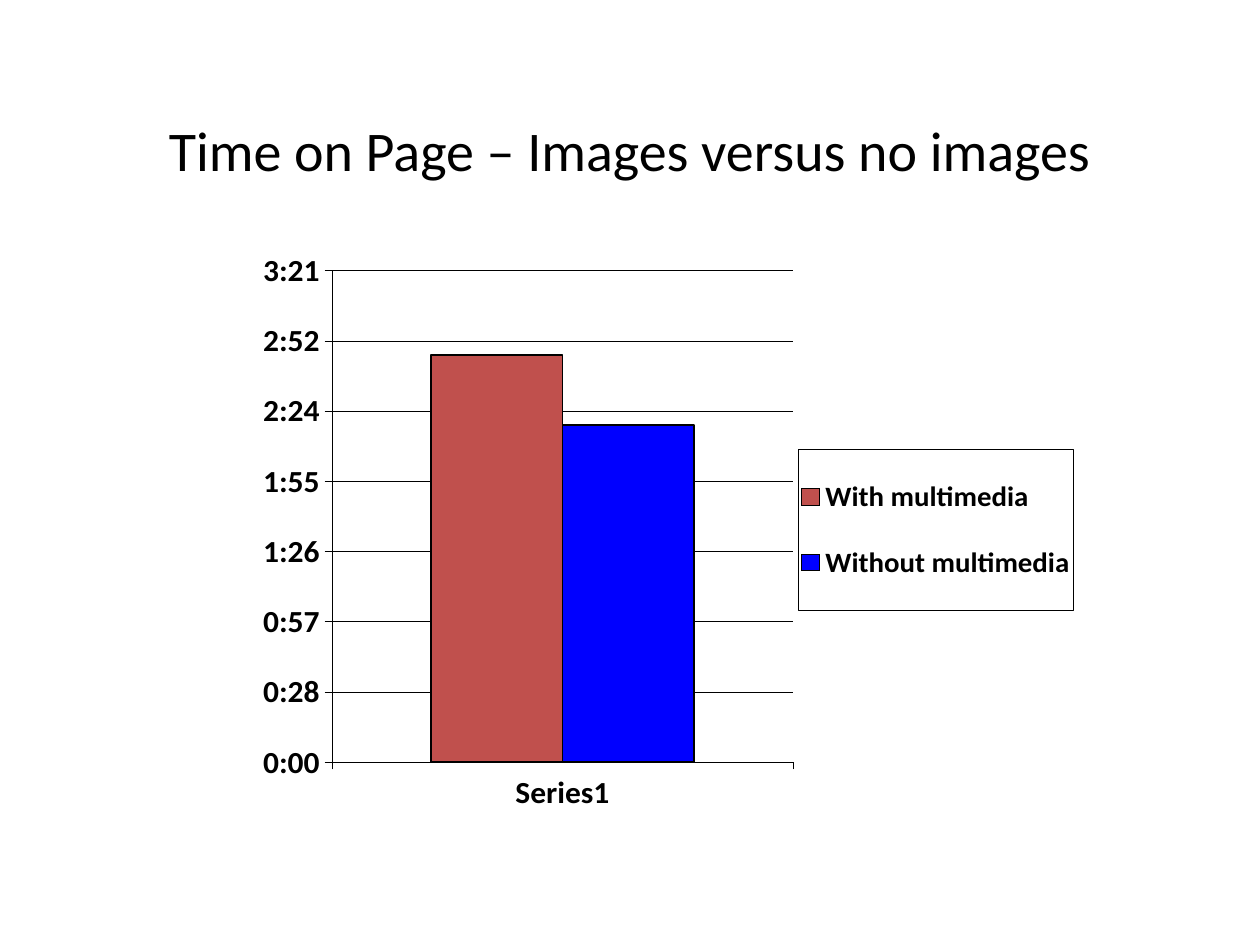
from pptx import Presentation
from pptx import util as u
from pptx.chart import data
from pptx.dml import color
from pptx.enum import chart as kinds, text
from pptx.oxml import ns, parse_xml

FONT = "Calibri"
BLACK = "000000"


def rgb(code):
    return color.RGBColor.from_string(code)


def place(part, after, x, y, w, h, inner=False):
    for old in part.findall(ns.qn("c:layout")):
        part.remove(old)
    target = '<c:layoutTarget val="inner"/>' if inner else ""
    modes = "".join(f'<c:{k}Mode val="edge"/>' for k in "xy")
    sizes = "".join(f'<c:{k} val="{v}"/>' for k, v in zip("xywh", (x, y, w, h)))
    part.insert(after, parse_xml(
        f'<c:layout {ns.nsdecls("c")}><c:manualLayout>'
        f'{target}{modes}{sizes}</c:manualLayout></c:layout>'))


class Deck:
    def __init__(self):
        self.show = Presentation()
        self.show.slide_width = u.Inches(10)
        self.show.slide_height = u.Inches(7.5)
        self.slide = self.show.slides.add_slide(self.show.slide_layouts[6])

    def style(self, font, size, bold=False):
        font.name = FONT
        font.size = u.Pt(size)
        font.bold = bold
        font.color.rgb = rgb(BLACK)

    def line(self, line, width):
        line.color.rgb = rgb(BLACK)
        line.width = u.Pt(width)

    def title(self, words, *box):
        frame = self.slide.shapes.add_textbox(*map(u.Inches, box)).text_frame
        frame.word_wrap = True
        frame.vertical_anchor = text.MSO_ANCHOR.MIDDLE
        frame.text = words
        para = frame.paragraphs[0]
        para.alignment = text.PP_ALIGN.CENTER
        self.style(para.runs[0].font, 32)

    def bars(self, group, series, *box):
        table = data.CategoryChartData(number_format="h:mm;@")
        table.categories = [group]
        for name, value, _ in series:
            table.add_series(name, [value])
        chart = self.slide.shapes.add_chart(
            kinds.XL_CHART_TYPE.COLUMN_CLUSTERED, *map(u.Inches, box), table).chart
        chart.has_title = False
        self.style(chart.font, 18, True)
        plot = chart.plots[0]
        plot.vary_by_categories = False
        plot.gap_width = 150
        plot.overlap = 0
        for item, (_, _, fill) in zip(plot.series, series):
            item.format.fill.solid()
            item.format.fill.fore_color.rgb = rgb(fill)
            self.line(item.format.line, 1)
        self.axes(chart)
        self.legend(chart)
        area = chart.element.find(".//" + ns.qn("c:plotArea"))
        place(area, 0, 0.1, 0.022, 0.549, 0.904, True)

    def axes(self, chart):
        for axis in (chart.category_axis, chart.value_axis):
            axis.major_tick_mark = kinds.XL_TICK_MARK.OUTSIDE
            axis.minor_tick_mark = kinds.XL_TICK_MARK.NONE
            self.style(axis.tick_labels.font, 18, True)
            self.line(axis.format.line, 0.25)
        chart.category_axis.tick_label_position = kinds.XL_TICK_LABEL_POSITION.LOW
        scale = chart.value_axis
        scale.minimum_scale = 0
        scale.maximum_scale = 0.14
        scale.major_unit = 0.02
        scale.has_major_gridlines = True
        self.line(scale.major_gridlines.format.line, 0.25)
        scale.tick_labels.number_format = "h:mm;@"
        scale.tick_labels.number_format_is_linked = False

    def legend(self, chart):
        chart.has_legend = True
        key = chart.legend
        key.position = kinds.XL_LEGEND_POSITION.RIGHT
        key.include_in_layout = False
        self.style(key.font, 16.5, True)
        part = chart.element.find(".//" + ns.qn("c:legend"))
        place(part, 1, 0.656, 0.35, 0.327, 0.297)
        part.find(ns.qn("c:txPr")).addprevious(parse_xml(
            f'<c:spPr {ns.nsdecls("c", "a")}><a:ln w="3175"><a:solidFill>'
            f'<a:srgbClr val="{BLACK}"/></a:solidFill></a:ln></c:spPr>'))


def main():
    deck = Deck()
    deck.title("Time on Page – Images versus no images", 0.5, 0.81, 9, 0.74)
    series = [("With multimedia", 0.116, "C0504D"),
              ("Without multimedia", 0.096, "0000FF")]
    deck.bars("Series1", series, 1.97, 2, 6.66, 4.44)
    deck.show.save("out.pptx")


if __name__ == "__main__":
    main()
